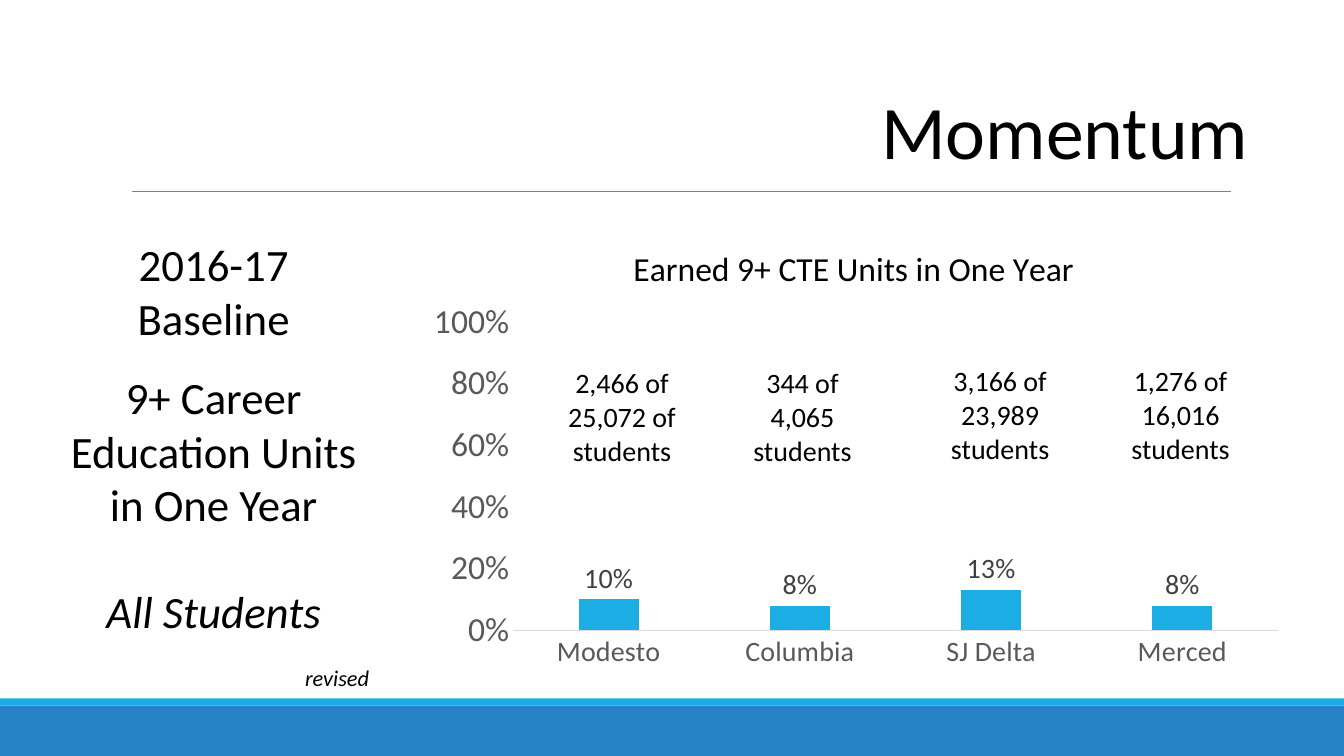
from pptx import Presentation
from pptx.chart.data import CategoryChartData
from pptx.dml.color import RGBColor
from pptx.enum.chart import XL_CHART_TYPE, XL_LABEL_POSITION, XL_TICK_MARK
from pptx.enum.shapes import MSO_CONNECTOR, MSO_SHAPE
from pptx.enum.text import PP_ALIGN
from pptx.oxml import parse_xml
from pptx.oxml.ns import nsdecls, qn
from pptx.util import Inches, Pt

FONT = "Calibri"
BLACK, GRAY, SKY, BLUE = "000000", "595959", "1CADE4", "2683C6"


def color(value):
    return RGBColor.from_string(value)


def style_font(font, size, value=BLACK, italic=False):
    font.name = FONT
    font.size = Pt(size)
    font.color.rgb = color(value)
    font.bold = False
    font.italic = italic


def add_text(page, box, lines, top_margin=0.05):
    """Each line is (text, size, alignment, italic, space before)."""
    frame = page.shapes.add_textbox(*map(Inches, box)).text_frame
    frame.word_wrap = True
    frame.margin_top = Inches(top_margin)
    for index, (text, size, align, italic, before) in enumerate(lines):
        para = frame.add_paragraph() if index else frame.paragraphs[0]
        para.text = text
        para.alignment = align
        para.space_before = Pt(before)
        style_font(para.runs[0].font, size, italic=italic)


def add_footer(page, box):
    left, top, width, height = box
    stripe = 0.07
    for y, depth, fill in ((top + stripe, height - stripe, BLUE), (top, stripe, SKY)):
        bar = page.shapes.add_shape(
            MSO_SHAPE.RECTANGLE, *map(Inches, (left, y, width, depth)))
        bar.shadow.inherit = False
        bar.fill.solid()
        bar.fill.fore_color.rgb = color(fill)
        bar.line.fill.background()


def add_header(page, box):
    left, top, width, height = box
    add_text(page, (left + 4.13, top, 7.04, height - 0.11),
             [("Momentum", 54, PP_ALIGN.RIGHT, False, 0)])
    bottom = top + height
    rule = page.shapes.add_connector(
        MSO_CONNECTOR.STRAIGHT, *map(Inches, (left, bottom, left + width, bottom)))
    rule.line.color.rgb = color("808080")
    rule.line.width = Pt(0.5)
    rule._element.spPr.append(parse_xml(f"<a:effectLst {nsdecls('a')}/>"))


def add_baseline(page, box):
    center = PP_ALIGN.CENTER
    add_text(page, box, [
        ("2016-17 Baseline", 32, center, False, 0),
        ("9+ Career Education Units in One Year", 32, center, False, 18),
        ("All Students", 32, center, True, 38),
        ("revised", 16, PP_ALIGN.RIGHT, True, 19),
    ], top_margin=0.25)


def set_layout(parent, inner=False, **fractions):
    """Place a chart part by fractions of the chart's size."""
    target = '<c:layoutTarget val="inner"/>' if inner else ""
    modes = "".join(f'<c:{key}Mode val="edge"/>' for key in "xy")
    values = "".join(f'<c:{key} val="{value}"/>' for key, value in fractions.items())
    for old in parent.findall(qn("c:layout")):
        parent.remove(old)
    layout = parse_xml(f"<c:layout {nsdecls('c')}><c:manualLayout>"
                       f"{target}{modes}{values}</c:manualLayout></c:layout>")
    text = parent.find(qn("c:tx"))
    if text is None:
        parent.insert(0, layout)
    else:
        text.addnext(layout)


def add_rate_chart(page, box):
    data = CategoryChartData(number_format="0%")
    data.categories = ["Modesto", "Columbia", "SJ Delta", "Merced"]
    data.add_series("Series 1", (0.1, 0.08, 0.13, 0.08))
    chart = page.shapes.add_chart(
        XL_CHART_TYPE.COLUMN_CLUSTERED, *map(Inches, box), data).chart
    style_font(chart.font, 10)
    chart.has_legend = False
    chart.has_title = True
    title = chart.chart_title
    title.include_in_layout = False
    title.text_frame.text = "Earned 9+ CTE Units in One Year"
    style_font(title.text_frame.paragraphs[0].runs[0].font, 24)
    set_layout(title._element, x=0.24, y=0.05)
    set_layout(chart._chartSpace.chart.plotArea, inner=True, x=0.11, y=0.23, w=0.87, h=0.67)

    for axis, size in ((chart.category_axis, 20), (chart.value_axis, 24)):
        style_font(axis.tick_labels.font, size, GRAY)
        axis.major_tick_mark = axis.minor_tick_mark = XL_TICK_MARK.NONE
        axis.has_major_gridlines = False
    chart.category_axis.format.line.color.rgb = color("D9D9D9")
    chart.category_axis.format.line.width = Pt(0.75)
    rates = chart.value_axis
    rates.format.line.fill.background()
    rates.minimum_scale, rates.maximum_scale, rates.major_unit = 0, 1, 0.2
    rates.tick_labels.number_format = "0%"
    rates.tick_labels.number_format_is_linked = False

    plot = chart.plots[0]
    plot.vary_by_categories = False
    plot.gap_width, plot.overlap = 219, -27
    fill = plot.series[0].format.fill
    fill.solid()
    fill.fore_color.rgb = color(SKY)
    plot.has_data_labels = True
    labels = plot.data_labels
    labels.show_value = True
    labels.position = XL_LABEL_POSITION.OUTSIDE_END
    labels.number_format, labels.number_format_is_linked = "0%", False
    style_font(labels.font, 20, "404040")


def add_counts(page, box):
    left, top, _, height = box
    for x, y, width, text in (
        (0, 0.02, 1.66, "2,466 of 25,072 of students"),
        (1.94, 0.02, 1.36, "344 of 4,065 students"),
        (3.9, 0, 1.36, "3,166 of 23,989 students"),
        (5.54, 0, 1.66, "1,276 of 16,016 students"),
    ):
        add_text(page, (left + x, top + y, width, height),
                 [(text, 20, PP_ALIGN.CENTER, False, 0)])


def main():
    deck = Presentation()
    deck.slide_width, deck.slide_height = Inches(13.33), Inches(7.5)
    page = deck.slides.add_slide(deck.slide_layouts[6])
    add_footer(page, (0, 6.93, 13.33, 0.57))
    add_header(page, (1.31, 0.78, 10.9, 1.12))
    add_baseline(page, (0.48, 2.1, 3.28, 4.83))
    add_rate_chart(page, (4.13, 2.15, 8.72, 4.56))
    add_counts(page, (5.34, 3.56, 7.2, 1.11))
    deck.save("out.pptx")


if __name__ == "__main__":
    main()
